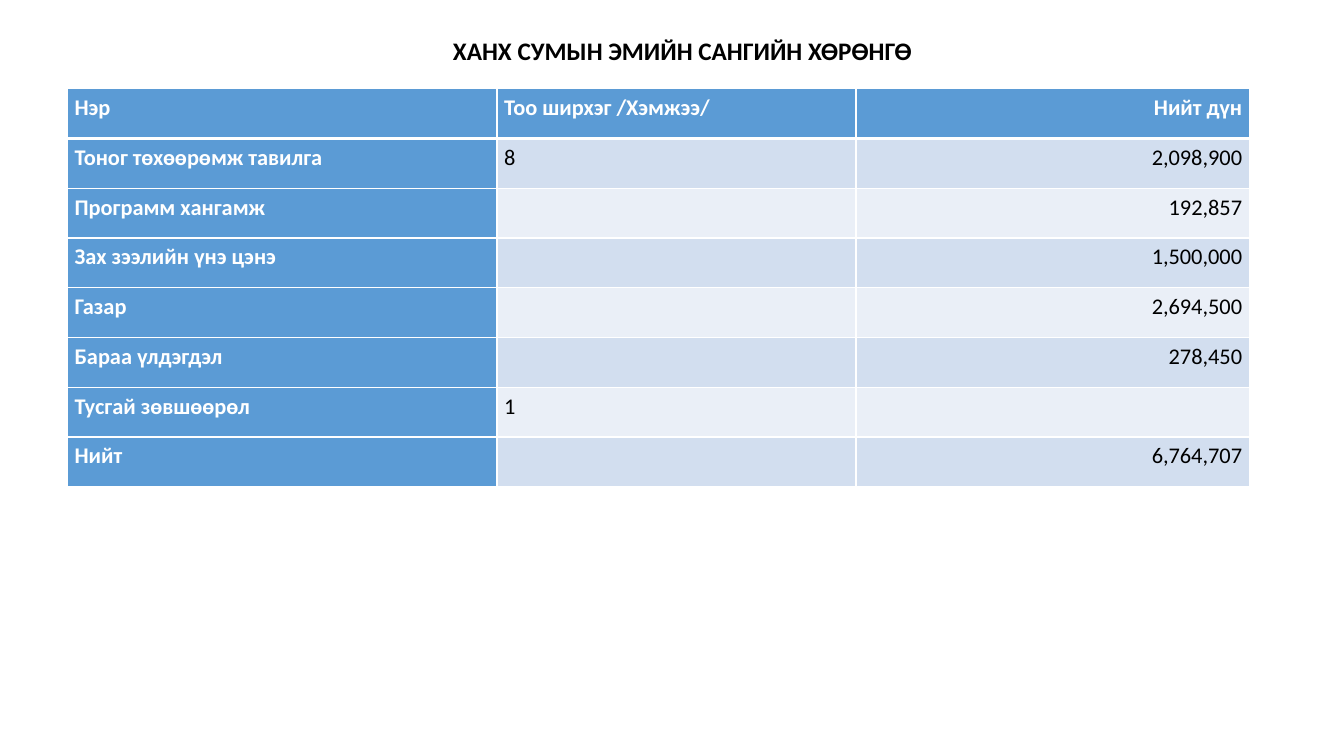
import dataclasses

import pptx
import pptx.dml.color
import pptx.enum.text
import pptx.oxml
import pptx.oxml.ns
import pptx.util
from pptx.util import Inches

ALIGN = pptx.enum.text.PP_ALIGN
ANCHOR = pptx.enum.text.MSO_ANCHOR


@dataclasses.dataclass(frozen=True)
class Theme:
    font: str = "Calibri"
    title_size: int = 18
    table_size: int = 16
    ink: str = "000000"
    paper: str = "FFFFFF"
    accent: str = "5B9BD5"
    bands: tuple = ("D2DEEF", "EAEFF7")
    rule: int = 1
    header_rule: int = 3


THEME = Theme()

TITLE = "ХАНХ СУМЫН ЭМИЙН САНГИЙН ХӨРӨНГӨ"
ASSETS = [
    ("Нэр", "Тоо ширхэг /Хэмжээ/", "Нийт дүн"),
    ("Тоног төхөөрөмж тавилга", "8", "2,098,900"),
    ("Программ хангамж", "", "192,857"),
    ("Зах зээлийн үнэ цэнэ", "", "1,500,000"),
    ("Газар", "", "2,694,500"),
    ("Бараа үлдэгдэл", "", "278,450"),
    ("Тусгай зөвшөөрөл", "1", ""),
    ("Нийт", "", "6,764,707"),
]
COLUMN_WIDTHS = (4.26, 3.56, 3.9)
COLUMN_ALIGNMENTS = (ALIGN.LEFT, ALIGN.LEFT, ALIGN.RIGHT)
TABLE_HEIGHT = 3.95


def rgb(value):
    return pptx.dml.color.RGBColor.from_string(value)


def write_text(frame, text, *, size, color, bold=False, align=ALIGN.LEFT,
               line_spacing=1.0, space_before=0):
    paragraph = frame.paragraphs[0]
    paragraph.alignment = align
    paragraph.line_spacing = line_spacing
    paragraph.space_before = pptx.util.Pt(space_before)
    run = paragraph.add_run()
    run.text = text
    run.font.name = THEME.font
    run.font.size = pptx.util.Pt(size)
    run.font.bold = bold
    run.font.color.rgb = rgb(color)


def add_title(slide):
    title = slide.shapes.title
    title.left, title.top = Inches(1.77), Inches(0.33)
    title.width, title.height = Inches(10), Inches(0.56)
    title.text_frame.word_wrap = True
    title.text_frame.auto_size = pptx.enum.text.MSO_AUTO_SIZE.NONE
    title.text_frame.vertical_anchor = ANCHOR.TOP
    write_text(title.text_frame, TITLE, size=THEME.title_size, color=THEME.ink,
               bold=True, align=ALIGN.CENTER, line_spacing=0.9)


def set_borders(cell, **widths):
    properties = cell._tc.get_or_add_tcPr()
    for side in ("L", "R", "T", "B"):
        width = pptx.util.Pt(widths.get(side, THEME.rule))
        properties.append(pptx.oxml.parse_xml(
            f'<a:ln{side} {pptx.oxml.ns.nsdecls("a")} w="{width}"><a:solidFill>'
            f'<a:srgbClr val="{THEME.paper}"/></a:solidFill></a:ln{side}>'))


def format_cell(cell, text, row, column):
    is_heading = row == 0 or column == 0
    cell.margin_left = cell.margin_right = Inches(0.07)
    cell.margin_top = cell.margin_bottom = 0
    cell.vertical_anchor = ANCHOR.TOP
    header_edge = {0: {"B": THEME.header_rule}, 1: {"T": THEME.header_rule}}
    set_borders(cell, **header_edge.get(row, {}))
    cell.fill.solid()
    cell.fill.fore_color.rgb = rgb(
        THEME.accent if is_heading else THEME.bands[(row - 1) % 2])
    if text:
        write_text(cell.text_frame, text, size=THEME.table_size,
                   color=THEME.paper if is_heading else THEME.ink,
                   bold=is_heading, align=COLUMN_ALIGNMENTS[column],
                   line_spacing=1.2, space_before=3)


def add_asset_table(slide):
    assets = slide.shapes.add_table(
        len(ASSETS), len(COLUMN_WIDTHS), Inches(0.67), Inches(0.88),
        Inches(sum(COLUMN_WIDTHS)), Inches(TABLE_HEIGHT)).table
    for column, width in zip(assets.columns, COLUMN_WIDTHS):
        column.width = Inches(width)
    for row, values in enumerate(ASSETS):
        for column, text in enumerate(values):
            format_cell(assets.cell(row, column), text, row, column)


def main():
    presentation = pptx.Presentation()
    presentation.slide_width = Inches(13.33)
    presentation.slide_height = Inches(7.5)
    slide = presentation.slides.add_slide(presentation.slide_layouts[5])
    add_title(slide)
    add_asset_table(slide)
    presentation.save("out.pptx")


if __name__ == "__main__":
    main()
